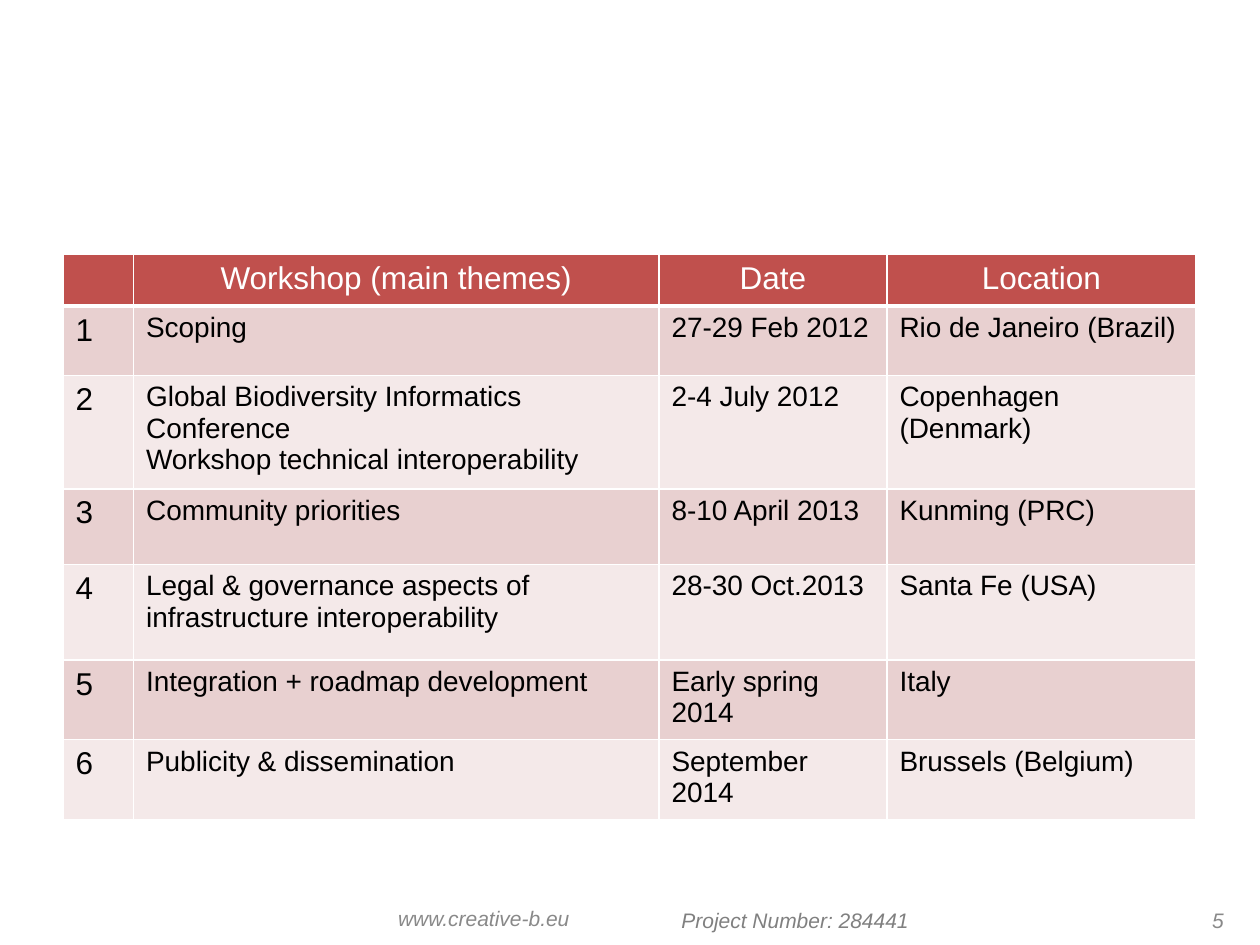
from dataclasses import dataclass

from lxml import etree
from pptx import Presentation
from pptx.dml.color import RGBColor
from pptx.enum.text import MSO_ANCHOR, PP_ALIGN
from pptx.oxml.ns import qn
from pptx.slide import Slide
from pptx.table import Table, _Cell
from pptx.util import Inches, Pt

LEFT, CENTER, RIGHT = PP_ALIGN.LEFT, PP_ALIGN.CENTER, PP_ALIGN.RIGHT
TOP, MIDDLE = MSO_ANCHOR.TOP, MSO_ANCHOR.MIDDLE
BLANK_LAYOUT = 6


@dataclass(frozen=True)
class Theme:
    font: str = "Arial"
    header_fill: str = "C0504D"
    band_fills: tuple[str, str] = ("E8D0D0", "F4E9E9")
    header_text: str = "FFFFFF"
    body_text: str = "000000"
    border: str = "FFFFFF"
    project_text: str = "808080"
    footer_text: str = "898989"
    large: int = 18
    body: int = 16
    footer: int = 12


@dataclass(frozen=True)
class Workshop:
    themes: str
    date: str
    location: str
    row_height: float


@dataclass(frozen=True)
class FooterNote:
    text: str
    left: float
    top: float
    width: float
    height: float
    color: str
    align: PP_ALIGN
    anchor: MSO_ANCHOR


THEME = Theme()
HEADINGS = ("", "Workshop (main themes)", "Date", "Location")
COLUMN_WIDTHS = (0.56, 4.17, 1.81, 2.45)
HEADER_HEIGHT = 0.41
HEADER_BORDERS = {"lnL": 1, "lnR": 1, "lnT": 1, "lnB": 3}
WORKSHOPS = (
    Workshop("Scoping", "27-29 Feb 2012", "Rio de Janeiro (Brazil)", 0.55),
    Workshop(
        "Global Biodiversity Informatics Conference\nWorkshop technical interoperability",
        "2-4 July 2012", "Copenhagen (Denmark)", 0.9,
    ),
    Workshop("Community priorities", "8-10 April 2013", "Kunming (PRC)", 0.6),
    Workshop(
        "Legal & governance aspects of infrastructure interoperability",
        "28-30 Oct.2013", "Santa Fe (USA)", 0.76,
    ),
    Workshop("Integration + roadmap development", "Early spring 2014", "Italy", 0.63),
    Workshop("Publicity & dissemination", "September 2014", "Brussels (Belgium)", 0.64),
)
FOOTER_NOTES = (
    FooterNote("Project Number: 284441", 5.31, 7.15, 3.62, 0.3, THEME.project_text, LEFT, TOP),
    FooterNote("5", 8.94, 7.1, 0.87, 0.4, THEME.footer_text, RIGHT, MIDDLE),
    FooterNote("www.creative-b.eu", 1.45, 7.09, 3.17, 0.4, THEME.footer_text, RIGHT, MIDDLE),
)


def fill_cell(cell: _Cell, text: str, fill: str, size: int, color: str, align: PP_ALIGN) -> None:
    cell.fill.solid()
    cell.fill.fore_color.rgb = RGBColor.from_string(fill)
    cell.text = text
    for paragraph in cell.text_frame.paragraphs:
        paragraph.alignment = align
        paragraph.font.name = THEME.font
        paragraph.font.size = Pt(size)
        paragraph.font.bold = False
        paragraph.font.color.rgb = RGBColor.from_string(color)


def add_header_borders(cell: _Cell) -> None:
    properties = cell._tc.get_or_add_tcPr()
    for side, width in HEADER_BORDERS.items():
        line = etree.SubElement(properties, qn(f"a:{side}"), w=str(Pt(width)))
        solid = etree.SubElement(line, qn("a:solidFill"))
        etree.SubElement(solid, qn("a:srgbClr"), val=THEME.border)


def fill_header(table: Table) -> None:
    table.rows[0].height = Inches(HEADER_HEIGHT)
    for cell, heading in zip(table.rows[0].cells, HEADINGS):
        add_header_borders(cell)
        fill_cell(cell, heading, THEME.header_fill, THEME.large, THEME.header_text, CENTER)


def fill_workshop(table: Table, number: int, workshop: Workshop) -> None:
    row = table.rows[number]
    row.height = Inches(workshop.row_height)
    band = THEME.band_fills[(number - 1) % 2]
    details = (str(number), workshop.themes, workshop.date, workshop.location)
    for column, (cell, detail) in enumerate(zip(row.cells, details)):
        size = THEME.body if column else THEME.large
        fill_cell(cell, detail, band, size, THEME.body_text, LEFT)


def add_schedule(slide: Slide) -> None:
    height = HEADER_HEIGHT + sum(workshop.row_height for workshop in WORKSHOPS)
    table = slide.shapes.add_table(
        len(WORKSHOPS) + 1, len(HEADINGS),
        Inches(0.5), Inches(2.02), Inches(sum(COLUMN_WIDTHS)), Inches(height),
    ).table
    for column, width in zip(table.columns, COLUMN_WIDTHS):
        column.width = Inches(width)
    fill_header(table)
    for number, workshop in enumerate(WORKSHOPS, start=1):
        fill_workshop(table, number, workshop)


def add_footer_note(slide: Slide, note: FooterNote) -> None:
    frame = slide.shapes.add_textbox(
        Inches(note.left), Inches(note.top), Inches(note.width), Inches(note.height)
    ).text_frame
    frame.word_wrap = True
    frame.vertical_anchor = note.anchor
    paragraph = frame.paragraphs[0]
    paragraph.text = note.text
    paragraph.alignment = note.align
    paragraph.font.name = THEME.font
    paragraph.font.size = Pt(THEME.footer)
    paragraph.font.italic = True
    paragraph.font.color.rgb = RGBColor.from_string(note.color)


def main() -> None:
    presentation = Presentation()
    presentation.slide_width = Inches(10)
    presentation.slide_height = Inches(7.5)
    slide = presentation.slides.add_slide(presentation.slide_layouts[BLANK_LAYOUT])
    add_schedule(slide)
    for note in FOOTER_NOTES:
        add_footer_note(slide, note)
    presentation.save("out.pptx")


if __name__ == "__main__":
    main()
